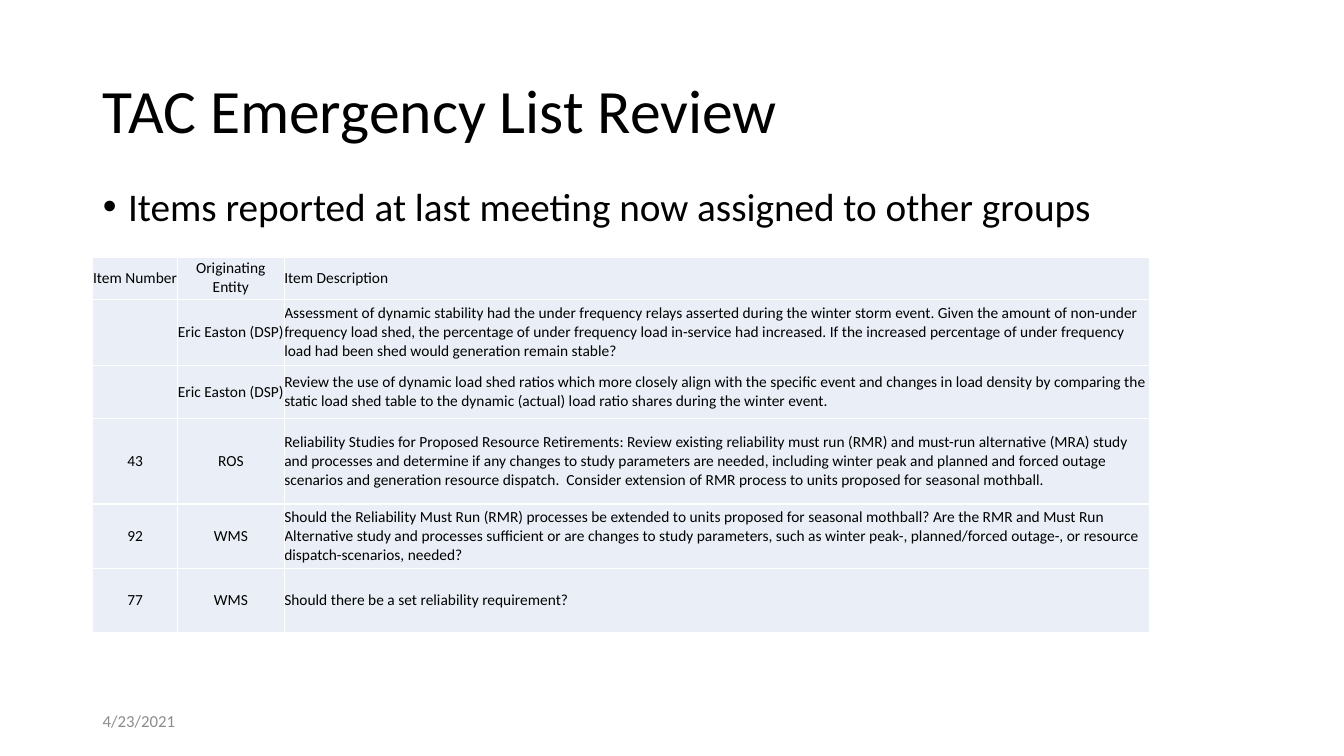
from dataclasses import dataclass

from lxml.etree import SubElement
from pptx import Presentation
from pptx.dml.color import RGBColor
from pptx.enum.text import MSO_ANCHOR as Anchor, MSO_AUTO_SIZE as AutoSize, PP_ALIGN as Align
from pptx.oxml import parse_xml
from pptx.oxml.ns import nsdecls, qn
from pptx.util import Inches, Pt

BLACK = RGBColor(0x00, 0x00, 0x00)
GRAY = RGBColor(0x8C, 0x8C, 0x8C)
PALE_BLUE = RGBColor(0xEA, 0xEF, 0xF7)
WHITE = RGBColor(0xFF, 0xFF, 0xFF)
FONT = "Calibri"
LEFT = 0.92
COLUMN_WIDTHS = (0.84, 1.06, 8.58)
COLUMN_ALIGNS = (Align.CENTER, Align.CENTER, Align.LEFT)


@dataclass(frozen=True)
class Item:
    height: float
    number: str
    entity: str
    description: str


ITEMS = (
    Item(0.42, "Item Number", "Originating Entity", "Item Description"),
    Item(0.66, "", "Eric Easton (DSP)",
         "Assessment of dynamic stability had the under frequency relays asserted during the "
         "winter storm event. Given the amount of non-under frequency load shed, the percentage "
         "of under frequency load in-service had increased. If the increased percentage of under "
         "frequency load had been shed would generation remain stable?"),
    Item(0.52, "", "Eric Easton (DSP)",
         "Review the use of dynamic load shed ratios which more closely align with the specific "
         "event and changes in load density by comparing the static load shed table to the "
         "dynamic (actual) load ratio shares during the winter event."),
    Item(0.85, "43", "ROS",
         "Reliability Studies for Proposed Resource Retirements: Review existing reliability must "
         "run (RMR) and must-run alternative (MRA) study and processes and determine if any "
         "changes to study parameters are needed, including winter peak and planned and forced "
         "outage scenarios and generation resource dispatch.  Consider extension of RMR process "
         "to units proposed for seasonal mothball."),
    Item(0.64, "92", "WMS",
         "Should the Reliability Must Run (RMR) processes be extended to units proposed for "
         "seasonal mothball? Are the RMR and Must Run Alternative study and processes sufficient "
         "or are changes to study parameters, such as winter peak-, planned/forced outage-, or "
         "resource dispatch-scenarios, needed?"),
    Item(0.64, "77", "WMS", "Should there be a set reliability requirement?"),
)


def place(shape, top: float, width: float, height: float) -> None:
    shape.left, shape.top = Inches(LEFT), Inches(top)
    shape.width, shape.height = Inches(width), Inches(height)


def write(frame, text: str, size: float, color: RGBColor = BLACK, align=Align.LEFT):
    """Put one formatted run in the first paragraph and return the paragraph."""
    para = frame.paragraphs[0]
    para.alignment = align
    span = para.add_run()
    span.text = text
    span.font.name, span.font.size = FONT, Pt(size)
    span.font.color.rgb = color
    return para


def fill_cell(cell, text: str, align) -> None:
    cell.fill.solid()
    cell.fill.fore_color.rgb = PALE_BLUE
    cell.vertical_anchor = Anchor.MIDDLE
    cell.margin_left = cell.margin_right = cell.margin_top = cell.margin_bottom = 0
    if text:
        write(cell.text_frame, text, 11, align=align)
    # Borders come before the fill in the cell properties
    properties = cell._tc.get_or_add_tcPr()
    for index, side in enumerate("LRTB"):
        properties.insert(index, parse_xml(
            f'<a:ln{side} {nsdecls("a")} w="{Pt(1)}"><a:solidFill>'
            f'<a:srgbClr val="{WHITE}"/></a:solidFill></a:ln{side}>'))


def add_title(slide) -> None:
    title = slide.shapes.title
    place(title, 0.4, 11.5, 1.45)
    frame = title.text_frame
    frame.auto_size, frame.vertical_anchor = AutoSize.NONE, Anchor.MIDDLE
    write(frame, "TAC Emergency List Review", 44).line_spacing = 0.9


def add_bullet(slide) -> None:
    body = slide.placeholders[1]
    place(body, 1.81, 11.33, 1.12)
    frame = body.text_frame
    frame.auto_size, frame.vertical_anchor = AutoSize.NONE, Anchor.TOP
    properties = frame.paragraphs[0]._p.get_or_add_pPr()
    properties.set("marL", str(Inches(0.25)))
    properties.set("indent", str(Inches(-0.25)))
    SubElement(properties, qn("a:buFont"), typeface="Arial")
    SubElement(properties, qn("a:buChar"), char="•")
    para = write(frame, "Items reported at last meeting now assigned to other groups", 28)
    para.line_spacing, para.space_before = 0.9, Pt(0)


def add_item_table(slide) -> None:
    height = sum(item.height for item in ITEMS)
    table = slide.shapes.add_table(
        len(ITEMS), len(COLUMN_WIDTHS), Inches(LEFT), Inches(2.55),
        Inches(sum(COLUMN_WIDTHS)), Inches(height)).table
    table.first_row = table.horz_banding = False
    for column, width in zip(table.columns, COLUMN_WIDTHS):
        column.width = Inches(width)
    for row, item in zip(table.rows, ITEMS):
        row.height = Inches(item.height)
        texts = (item.number, item.entity, item.description)
        for cell, text, align in zip(row.cells, texts, COLUMN_ALIGNS):
            fill_cell(cell, text, align)


def add_date(slide) -> None:
    box = slide.shapes.add_textbox(Inches(LEFT), Inches(6.95), Inches(3), Inches(0.4))
    frame = box.text_frame
    frame.word_wrap, frame.vertical_anchor = True, Anchor.MIDDLE
    write(frame, "4/23/2021", 12, GRAY)


def main() -> None:
    deck = Presentation()
    deck.slide_width, deck.slide_height = Inches(13.33), Inches(7.5)
    page = deck.slides.add_slide(deck.slide_layouts[1])
    add_title(page)
    add_item_table(page)
    add_bullet(page)
    add_date(page)
    deck.save("out.pptx")


if __name__ == "__main__":
    main()
